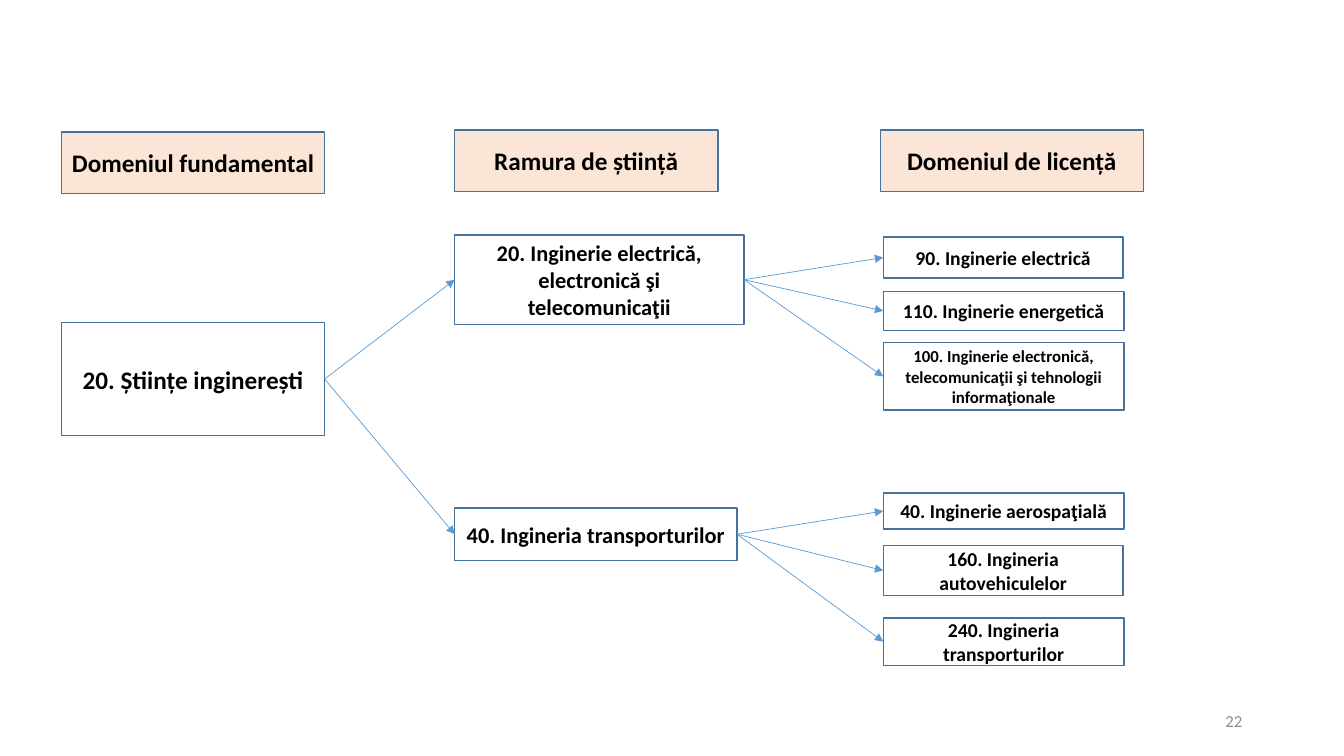
from lxml import etree
from pptx import Presentation
from pptx.dml.color import RGBColor
from pptx.enum.shapes import MSO_CONNECTOR, MSO_SHAPE
from pptx.enum.text import MSO_ANCHOR, PP_ALIGN
from pptx.oxml.ns import qn
from pptx.util import Pt

PX = 9144  # 100 px to the inch
FONT = "Calibri"
COLORS = {
    "header": "FBE5D6",
    "border": "43739E",
    "arrow": "5B9BD5",
    "text": "000000",
    "number": "8C8C8C",
}
RECTANGLE = MSO_SHAPE.RECTANGLE
STRAIGHT = MSO_CONNECTOR.STRAIGHT
MIDDLE = MSO_ANCHOR.MIDDLE
CENTER, RIGHT = PP_ALIGN.CENTER, PP_ALIGN.RIGHT
LEFT_SITE, RIGHT_SITE = 1, 3


def write_text(shape, text, size, color, alignment, bold):
    frame = shape.text_frame
    frame.word_wrap = True
    frame.vertical_anchor = MIDDLE
    paragraph = frame.paragraphs[0]
    paragraph.alignment = alignment
    run = paragraph.add_run()
    run.text = text
    run.font.name = FONT
    run.font.size = Pt(size)
    run.font.bold = bold
    run.font.color.rgb = RGBColor.from_string(COLORS[color])


def add_box(slide, text, size, left, top, width, height, fill=None):
    box = slide.shapes.add_shape(
        RECTANGLE, left * PX, top * PX, width * PX, height * PX)
    box.shadow.inherit = False
    if fill:
        box.fill.solid()
        box.fill.fore_color.rgb = RGBColor.from_string(COLORS[fill])
    else:
        box.fill.background()
    box.line.color.rgb = RGBColor.from_string(COLORS["border"])
    box.line.width = Pt(1)
    write_text(box, text, size, "text", CENTER, True)
    return box


presentation = Presentation()
presentation.slide_width = 1333 * PX
presentation.slide_height = 750 * PX
slide = presentation.slides.add_slide(presentation.slide_layouts[6])

# Column headers
headers = [
    ("Domeniul fundamental", 61, 131),
    ("Ramura de știință", 451, 129),
    ("Domeniul de licență", 873, 129),
]
for text, left, top in headers:
    add_box(slide, text, 18, left, top, 261, 61, "header")

# Tree: field, branches, degree domains
field = add_box(slide, "20. Științe inginerești", 18, 61, 320, 261, 112)

# Branch: text, top, width, height; domains: text, size, top, width, height
branches = [
    ("20. Inginerie electrică, electronică şi telecomunicaţii", 233, 287, 89, [
        ("90. Inginerie electrică", 14, 235, 238, 41),
        ("110. Inginerie energetică", 14, 289, 239, 39),
        ("100. Inginerie electronică, telecomunicaţii şi tehnologii "
         "informaţionale", 12, 340, 239, 67),
    ]),
    ("40. Ingineria transporturilor", 504, 280, 52, [
        ("40. Inginerie aerospaţială", 14, 489, 239, 36),
        ("160. Ingineria autovehiculelor", 14, 541, 238, 50),
        ("240. Ingineria transporturilor", 14, 613, 239, 47),
    ]),
]
links = []
for text, top, width, height, domains in branches:
    branch = add_box(slide, text, 16, 451, top, width, height)
    links.append((field, branch))
    for domain_text, size, domain_top, domain_width, domain_height in domains:
        domain = add_box(slide, domain_text, size, 876, domain_top,
                         domain_width, domain_height)
        links.append((branch, domain))

# Arrows from each box to its children
for parent, child in links:
    arrow = slide.shapes.add_connector(STRAIGHT, 0, 0, 0, 0)
    arrow.begin_connect(parent, RIGHT_SITE)
    arrow.end_connect(child, LEFT_SITE)
    arrow.line.color.rgb = RGBColor.from_string(COLORS["arrow"])
    arrow.line.width = Pt(0.5)
    line = arrow.line._get_or_add_ln()
    etree.SubElement(line, qn("a:tailEnd"), type="triangle")
    etree.SubElement(arrow._element.spPr, qn("a:effectLst"))

slide_number = slide.shapes.add_textbox(942 * PX, 695 * PX, 300 * PX, 40 * PX)
write_text(slide_number, "22", 12, "number", RIGHT, False)

presentation.save("out.pptx")
